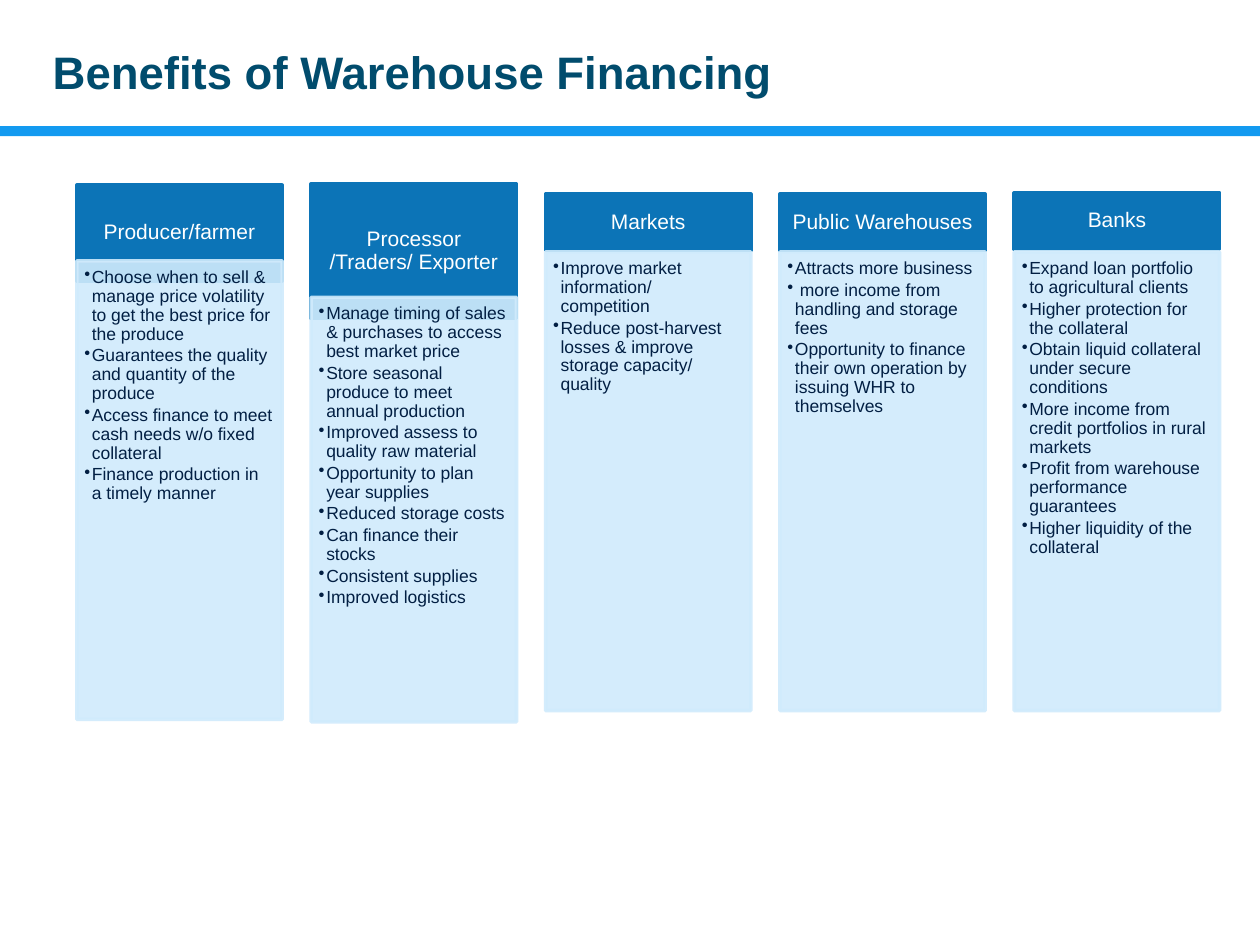
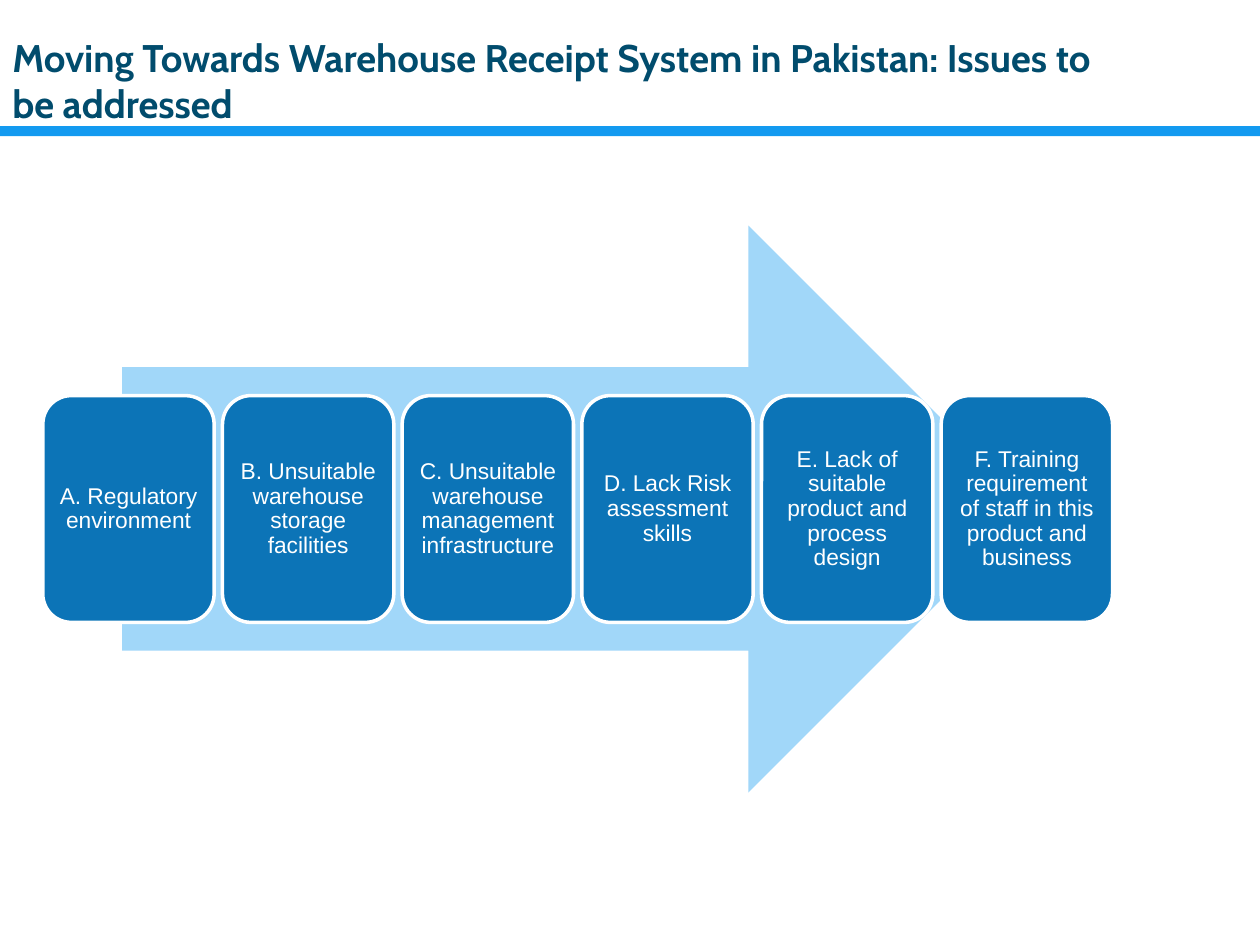
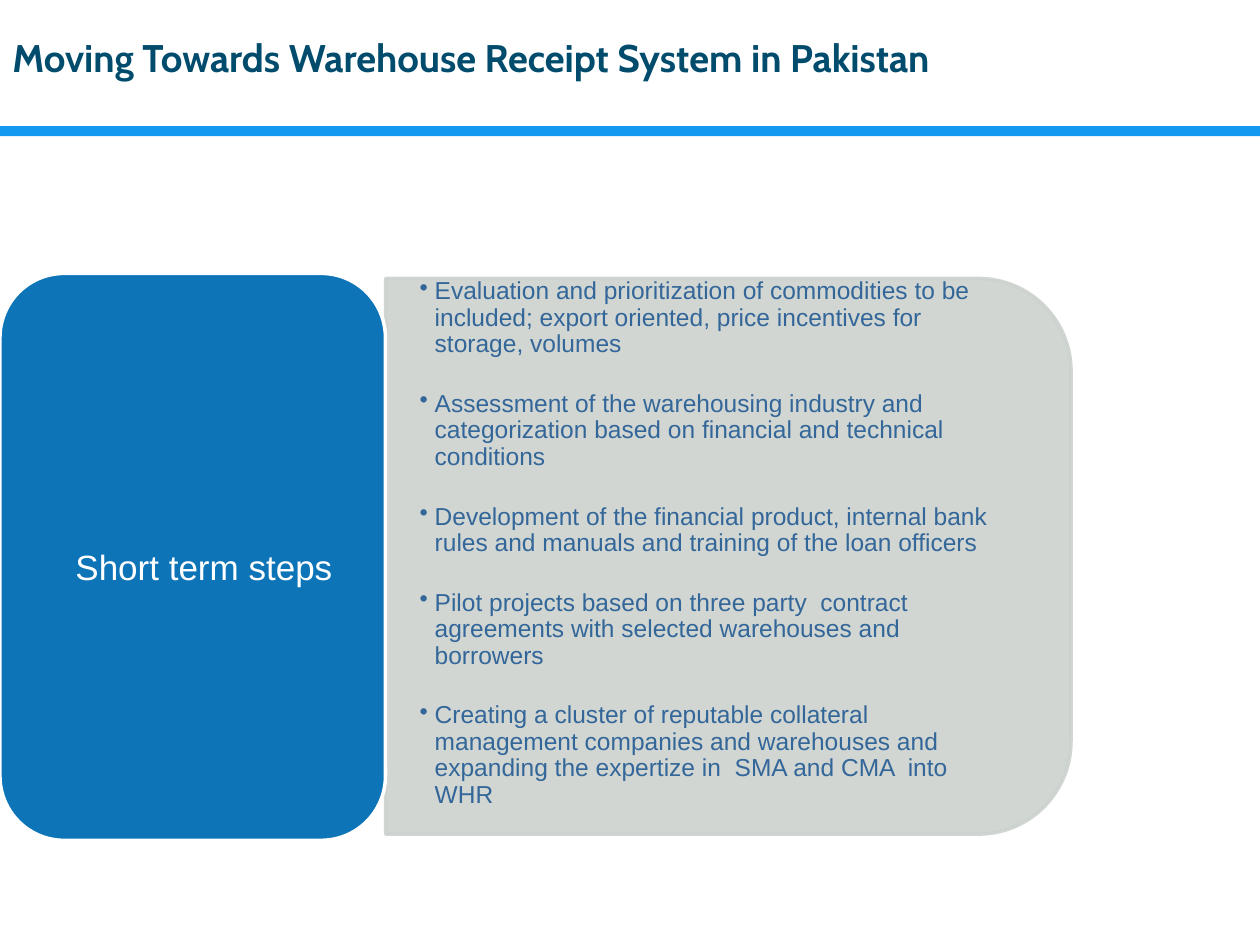
from lxml import etree
from pptx import Presentation
from pptx.dml.color import RGBColor
from pptx.enum.shapes import MSO_SHAPE as SHAPE
from pptx.enum.text import MSO_ANCHOR as ANCHOR, PP_ALIGN as ALIGN
from pptx.oxml.ns import qn
from pptx.util import Inches, Pt

WHITE = RGBColor(0xFF, 0xFF, 0xFF)
TITLE = RGBColor(0x01, 0x4C, 0x6D)
BAND = RGBColor(0x13, 0x9A, 0xF0)
BLUE = RGBColor(0x0C, 0x74, 0xB7)
PALE_BLUE = RGBColor(0xD0, 0xEB, 0xFC)
ARROW = RGBColor(0xA1, 0xD7, 0xF9)
GREY = RGBColor(0xCC, 0xD2, 0xCE)
NAVY = RGBColor(0x02, 0x1F, 0x43)
STEEL = RGBColor(0x33, 0x66, 0x99)

# Header text, header top, header height, body top, body height, bullets
BENEFITS = [
    ("Producer/farmer", 1.47, 0.76, 2.07, 3.64, [
        "Choose when to sell & manage price volatility to get the best price for the produce",
        "Guarantees the quality and quantity of the produce",
        "Access finance to meet cash needs w/o fixed collateral",
        "Finance production in a timely manner",
    ]),
    ("Processor /Traders/ Exporter", 1.46, 1.07, 2.36, 3.37, [
        "Manage timing of sales & purchases to access best market price",
        "Store seasonal produce to meet annual production",
        "Improved assess to quality raw material",
        "Opportunity to plan year supplies",
        "Reduced storage costs",
        "Can finance their stocks",
        "Consistent supplies",
        "Improved logistics",
    ]),
    ("Markets", 1.54, 0.45, 2, 3.64, [
        "Improve market information/ competition",
        "Reduce post-harvest losses & improve storage capacity/ quality",
    ]),
    ("Public Warehouses", 1.54, 0.45, 2, 3.64, [
        "Attracts more business",
        " more income from handling and storage fees",
        "Opportunity to finance their own operation by issuing WHR to themselves",
    ]),
    ("Banks", 1.53, 0.45, 2, 3.64, [
        "Expand loan portfolio to agricultural clients",
        "Higher protection for the collateral",
        "Obtain liquid collateral under secure conditions",
        "More income from credit portfolios in rural markets",
        "Profit from warehouse performance guarantees",
        "Higher liquidity of the collateral",
    ]),
]
ISSUES = [
    "A. Regulatory environment",
    "B. Unsuitable warehouse storage facilities",
    "C. Unsuitable warehouse management infrastructure",
    "D. Lack Risk assessment skills",
    "E. Lack of suitable product and process design",
    "F. Training requirement of staff in this product and business",
]
STEPS = [
    "Evaluation and prioritization of commodities to be included; export oriented, "
    "price incentives for storage, volumes",
    "Assessment of the warehousing industry and categorization based on financial "
    "and technical conditions",
    "Development of the financial product, internal bank rules and manuals and "
    "training of the loan officers",
    "Pilot projects based on three party  contract agreements with selected "
    "warehouses and borrowers",
    "Creating a cluster of reputable collateral management companies and warehouses "
    "and expanding the expertize in  SMA and CMA  into WHR",
]


def set_alpha(color_format, percent):
    solid = color_format._xPr.find(qn("a:solidFill"))
    etree.SubElement(solid[0], qn("a:alpha"), val=str(percent * 1000))


def add_box(slide, kind, box, fill, line=None, alpha=None):
    sp = slide.shapes.add_shape(kind, *map(Inches, box))
    sp.shadow.inherit = False
    sp.fill.solid()
    sp.fill.fore_color.rgb = fill
    if line is None:
        sp.line.fill.background()
    else:
        sp.line.color.rgb = line
        sp.line.width = Pt(2)
    if alpha:
        set_alpha(sp.fill, alpha)
        set_alpha(sp.line.fill, alpha)
    return sp


def write(sp, lines, size, color, font="Arial", bold=False, align=ALIGN.LEFT,
          anchor=ANCHOR.TOP, insets=(0.1, 0.05, 0.1, 0.05), spacing=0.9, after=0,
          bullet=None):
    """Fill a shape with paragraphs; bullet is the hanging indent in inches."""
    tf = sp.text_frame
    tf.word_wrap = True
    tf.vertical_anchor = anchor
    for side, inset in zip(("left", "top", "right", "bottom"), insets):
        setattr(tf, f"margin_{side}", Inches(inset))
    for i, line in enumerate(lines):
        p = tf.add_paragraph() if i else tf.paragraphs[0]
        if bullet:
            pPr = p._p.get_or_add_pPr()
            pPr.set("marL", str(Inches(bullet)))
            pPr.set("indent", str(-Inches(bullet)))
            etree.SubElement(pPr, qn("a:buChar"), char="•")
        for name, value in {"alignment": align, "line_spacing": spacing,
                            "space_after": Pt(after)}.items():
            setattr(p, name, value)
        r = p.add_run()
        r.text = line
        for name, value in {"name": font, "size": Pt(size), "bold": bold}.items():
            setattr(r.font, name, value)
        r.font.color.rgb = color


def write_label(sp, text, size, insets):
    write(sp, [text], size, WHITE, align=ALIGN.CENTER, anchor=ANCHOR.MIDDLE,
          insets=insets)


def add_titled_slide(prs, title, box, size=22, font="Cabin"):
    slide = prs.slides.add_slide(prs.slide_layouts[6])
    add_box(slide, SHAPE.RECTANGLE, (0, 1, 10, 0.08), BAND)
    tb = slide.shapes.add_textbox(*map(Inches, box))
    write(tb, [title], size, TITLE, font, bold=True, spacing=1.0)
    return slide


def add_benefit_column(slide, left, width, column):
    header, head_top, head_height, body_top, body_height, bullets = column
    head = add_box(slide, SHAPE.RECTANGLE, (left, head_top, width, head_height),
                   BLUE, BLUE)
    write_label(head, header, 12, (0.09, 0.05, 0.09, 0.05))
    body = add_box(slide, SHAPE.RECTANGLE, (left, body_top, width, body_height),
                   PALE_BLUE, PALE_BLUE, alpha=90)
    write(body, bullets, 10, NAVY, insets=(0.06, 0.06, 0.08, 0.09), after=1.5,
          bullet=0.06)


def add_issue_cards(slide, box):
    left, top, width, height = box
    card_width = 1.36
    pitch = (width - card_width) / (len(ISSUES) - 1)
    for i, issue in enumerate(ISSUES):
        card = add_box(slide, SHAPE.ROUNDED_RECTANGLE,
                       (left + i * pitch, top, card_width, height), BLUE, WHITE)
        write_label(card, issue, 13, (0.05,) * 4)


def add_steps_panel(slide, box):
    """Panel rounded on its right side, with the steps written over it."""
    left, top, width, height = box
    shift = (width - height) / 2
    panel = add_box(slide, SHAPE.ROUND_2_SAME_RECTANGLE,
                    (left + shift, top - shift, height, width), GREY, GREY, alpha=90)
    panel.rotation = 90
    tb = slide.shapes.add_textbox(*map(Inches, (left, top, width - 0.22, height)))
    write(tb, STEPS, 14, STEEL, insets=(0.27, 0, 0.27, 0), after=19, bullet=0.12)


def build_benefits(prs):
    slide = add_titled_slide(prs, "Benefits of Warehouse Financing",
                             (0.32, 0.3, 9.25, 0.62), 26, "Arial")
    for i, column in enumerate(BENEFITS):
        add_benefit_column(slide, 0.61 + i * 1.86, 1.63, column)


def build_issues(prs):
    slide = add_titled_slide(
        prs, "Moving Towards Warehouse Receipt System in Pakistan: Issues to be addressed",
        (0, 0.22, 8.86, 0.84))
    add_box(slide, SHAPE.RIGHT_ARROW, (0.97, 1.79, 7.22, 4.5), ARROW)
    add_issue_cards(slide, (0.34, 3.14, 8.49, 1.8))


def build_steps(prs):
    slide = add_titled_slide(prs, "Moving Towards Warehouse Receipt System in Pakistan",
                             (0, 0.22, 8.86, 0.47))
    add_steps_panel(slide, (3.06, 2.21, 5.44, 4.41))
    term = add_box(slide, SHAPE.ROUNDED_RECTANGLE, (0, 2.17, 3.06, 4.5), BLUE, WHITE)
    write_label(term, "Short term steps", 20, (0.37, 0.3, 0.19, 0.1))


def main():
    prs = Presentation()
    prs.slide_width, prs.slide_height = Inches(10), Inches(7.5)
    for build in (build_benefits, build_issues, build_steps):
        build(prs)
    prs.save("out.pptx")


if __name__ == "__main__":
    main()
